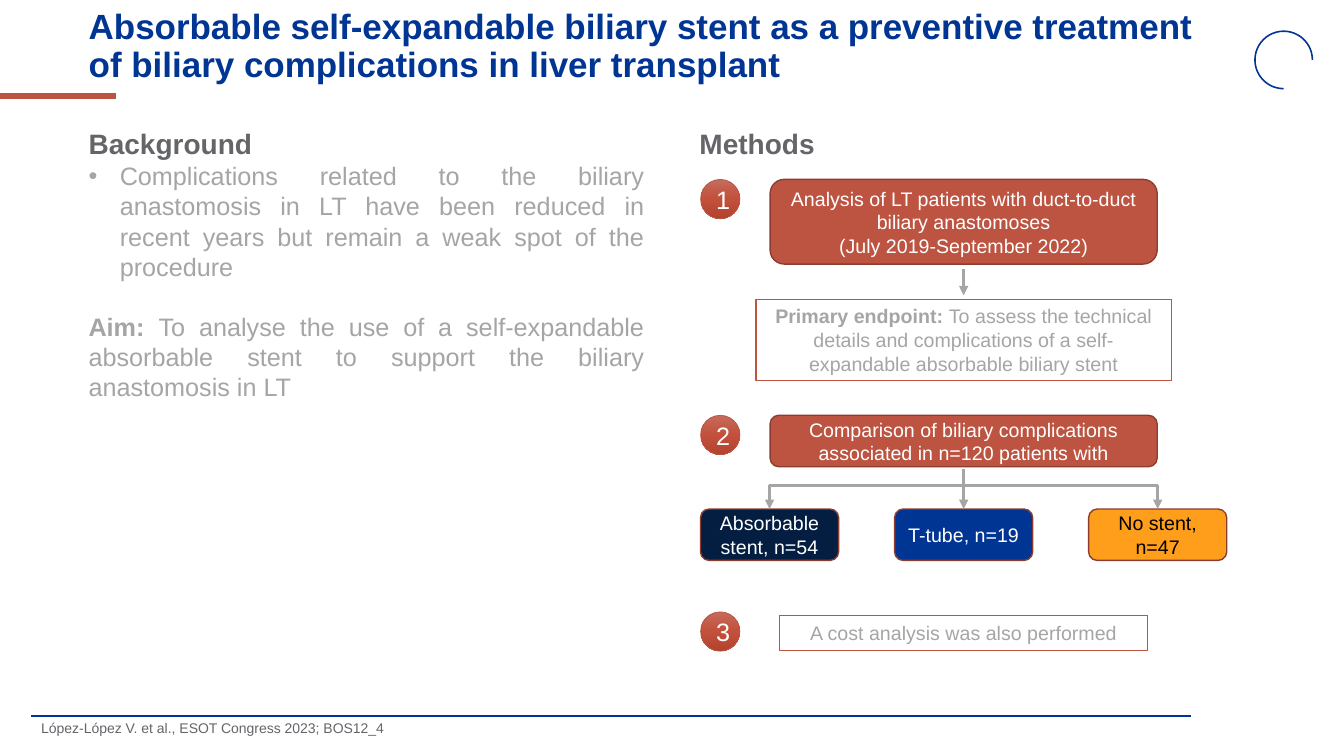
from dataclasses import dataclass
from lxml.etree import SubElement
from pptx import Presentation
from pptx.dml.color import RGBColor
from pptx.enum.shapes import MSO_CONNECTOR as LINK, MSO_SHAPE as FORM
from pptx.enum.text import MSO_ANCHOR as ANCHOR, PP_ALIGN as ALIGN
from pptx.oxml.ns import qn
from pptx.util import Inches, Pt


@dataclass(frozen=True)
class Theme:
    font: str = "Arial"
    blue: str = "003594"
    navy: str = "041E42"
    amber: str = "FF9E1B"
    brick: str = "BC5441"
    edge: str = "8B3E30"
    slate: str = "636569"
    gray: str = "A5A5A5"
    white: str = "FFFFFF"
    black: str = "000000"
    badge: tuple = ("C56B5E", "C2503B", "B2432F")
    title: int = 25
    head: int = 20
    body: int = 18
    label: int = 14
    note: int = 10


@dataclass(frozen=True)
class Box:
    left: float
    top: float
    wide: float
    high: float

    def area(self, left, top, wide, high):
        return Box(self.left + left, self.top + top, wide, high)

    def mid(self, top, wide, high):
        return self.area((self.wide - wide) / 2, top, wide, high)

    def spot(self, left, top):
        return self.left + left, self.top + top

    def size(self):
        return [cell(v) for v in (self.left, self.top, self.wide, self.high)]


THEME = Theme()
COLS, ROWS = 133.33, 75


def cell(count):
    return Inches(count / 10)


def hue(code):
    return RGBColor.from_string(code)


def style(para, size, color, bold=False, align=None):
    para.alignment = align
    for run in para.runs:
        font = run.font
        font.name, font.size, font.bold = THEME.font, Pt(size), bold
        font.color.rgb = hue(color)


def write(slide, box, text, size, color, bold=False):
    frame = slide.shapes.add_textbox(*box.size()).text_frame
    frame.word_wrap = True
    frame.text = text
    style(frame.paragraphs[0], size, color, bold)
    return frame


def shape(slide, box, form, text, size, ink, fill=None, line=THEME.edge, width=1):
    item = slide.shapes.add_shape(form, *box.size())
    item.shadow.inherit = False
    if fill:
        item.fill.solid()
        item.fill.fore_color.rgb = hue(fill)
    else:
        item.fill.background()
    item.line.color.rgb = hue(line)
    item.line.width = Pt(width)
    frame = item.text_frame
    frame.word_wrap = True
    frame.vertical_anchor = ANCHOR.MIDDLE
    frame.text = text
    for para in frame.paragraphs:
        style(para, size, ink, align=ALIGN.CENTER)
    return item


def card(slide, box, text, fill, ink=THEME.white):
    return shape(slide, box, FORM.ROUNDED_RECTANGLE, text, THEME.label, ink, fill)


def frame(slide, box, text):
    item = shape(slide, box, FORM.RECTANGLE, text, THEME.label, THEME.gray,
                 line=THEME.brick, width=0.75)
    item.text_frame.vertical_anchor = ANCHOR.TOP
    return item


def badge(slide, box, text):
    item = shape(slide, box, FORM.OVAL, text, THEME.body, THEME.white,
                 line=THEME.brick, width=0.5)
    item.fill.gradient()
    item.fill.gradient_angle = 270
    stops = item.element.spPr.find(".//" + qn("a:gsLst"))
    stops.clear()
    for step, code in enumerate(THEME.badge):
        stop = SubElement(stops, qn("a:gs"), pos=str(step * 50000))
        SubElement(stop, qn("a:srgbClr"), val=code)


def link(slide, start, end, color, width, kind=LINK.STRAIGHT, tip=False):
    item = slide.shapes.add_connector(kind, *map(cell, start + end))
    item.line.color.rgb = hue(color)
    item.line.width = Pt(width)
    props = item.element.spPr
    if tip:
        SubElement(props.find(qn("a:ln")), qn("a:tailEnd"), type="triangle")
    SubElement(props, qn("a:effectLst"))
    if kind == LINK.ELBOW:
        guides = props.find(".//" + qn("a:avLst"))
        SubElement(guides, qn("a:gd"), name="adj1", fmla="val 100000")


def arrow(slide, start, end, kind=LINK.STRAIGHT):
    link(slide, start, end, THEME.gray, 2.25, kind, True)


def header(slide, box):
    title = slide.shapes.title
    title.left, title.top, title.width, title.height = box.area(7.8, 1, 115, 7.3).size()
    text = title.text_frame
    text.word_wrap = True
    text.vertical_anchor = ANCHOR.MIDDLE
    text.text = ("Absorbable self-expandable biliary stent as a preventive treatment "
                 "of biliary complications in liver transplant")
    para = text.paragraphs[0]
    para.line_spacing = 0.9
    style(para, THEME.title, THEME.blue, True, ALIGN.LEFT)
    link(slide, box.spot(0, 9.5), box.spot(11.5, 9.5), THEME.brick, 4.5)
    ring = shape(slide, box.area(124.5, 3.1, 5.7, 5.7), FORM.ARC, "", THEME.note,
                 THEME.blue, line=THEME.blue, width=1.13)
    ring.adjustments[0], ring.adjustments[1] = 54, 0


def footer(slide, box):
    link(slide, box.spot(0, 0), box.spot(box.wide, 0), THEME.blue, 1.5)
    text = write(slide, box.area(0, 0.1, 78.4, 3.4),
                 "López-López V. et al., ESOT Congress 2023; BOS12_4",
                 THEME.note, THEME.slate)
    text.paragraphs[0].line_spacing = 0.9


def context(slide, box):
    text = write(slide, box, "Background", THEME.head, THEME.slate, True)
    point = text.add_paragraph()
    point.text = ("Complications related to the biliary anastomosis in LT have been "
                  "reduced in recent years but remain a weak spot of the procedure")
    props = point._p.get_or_add_pPr()
    props.set("marL", str(cell(3.1)))
    props.set("indent", str(-cell(3.1)))
    SubElement(props, qn("a:buFont"), typeface=THEME.font)
    SubElement(props, qn("a:buChar"), char="•")
    style(point, THEME.body, THEME.gray, align=ALIGN.JUSTIFY)
    aim = text.add_paragraph()
    aim.space_before = Pt(21)
    aim.add_run().text = "Aim: "
    aim.add_run().text = ("To analyse the use of a self-expandable absorbable stent "
                          "to support the biliary anastomosis in LT")
    style(aim, THEME.body, THEME.gray, align=ALIGN.JUSTIFY)
    aim.runs[0].font.bold = True


def methods(slide, box):
    write(slide, box.area(-1.1, 0, 57.1, 4.4), "Methods", THEME.head, THEME.slate, True)
    for step, top in enumerate((5.7, 29.1, 48.6), 1):
        badge(slide, box.area(0, top, 3.9, 3.9), str(step))
    half = box.wide / 2
    card(slide, box.mid(5.7, 38.4, 8.4),
         "Analysis of LT patients with duct-to-duct biliary anastomoses\n"
         "(July 2019-September 2022)", THEME.brick)
    arrow(slide, box.spot(half, 14.6), box.spot(half, 17.2))
    goal = frame(slide, box.mid(17.6, 41.2, 8.1), "Primary endpoint: ")
    para = goal.text_frame.paragraphs[0]
    para.add_run().text = ("To assess the technical details and complications of a "
                           "self-expandable absorbable biliary stent")
    style(para, THEME.label, THEME.gray, align=ALIGN.CENTER)
    para.runs[0].font.bold = True
    card(slide, box.mid(29.1, 38.4, 5.1),
         "Comparison of biliary complications associated in n=120 patients with",
         THEME.brick)
    groups(slide, box.area(0, 34.4, box.wide, 9.1))
    frame(slide, box.mid(49, 36.5, 3.4), "A cost analysis was also performed")


def groups(slide, box):
    arms = (("Absorbable stent, n=54", THEME.navy, THEME.white),
            ("T-tube, n=19", THEME.blue, THEME.white),
            ("No stent, n=47", THEME.amber, THEME.black))
    wide, high, half = 13.7, 5.1, box.wide / 2
    top = box.high - high
    gap = (box.wide - wide) / (len(arms) - 1)
    for step, (text, fill, ink) in enumerate(arms):
        card(slide, box.area(step * gap, top, wide, high), text, fill, ink)
    for side in (wide / 2, box.wide - wide / 2):
        arrow(slide, box.spot(half, 1.7), box.spot(side, top), LINK.ELBOW)
    arrow(slide, box.spot(half, 0), box.spot(half, top))


def main():
    deck = Presentation()
    deck.slide_width, deck.slide_height = cell(COLS), cell(ROWS)
    slide = deck.slides.add_slide(deck.slide_layouts[5])
    header(slide, Box(0, 0, COLS, 10))
    context(slide, Box(7.8, 12.1, 57.1, 31.6))
    methods(slide, Box(69.5, 12.1, 52.2, 52.5))
    footer(slide, Box(3.1, 71, 115.1, 4))
    deck.save("out.pptx")


if __name__ == "__main__":
    main()
